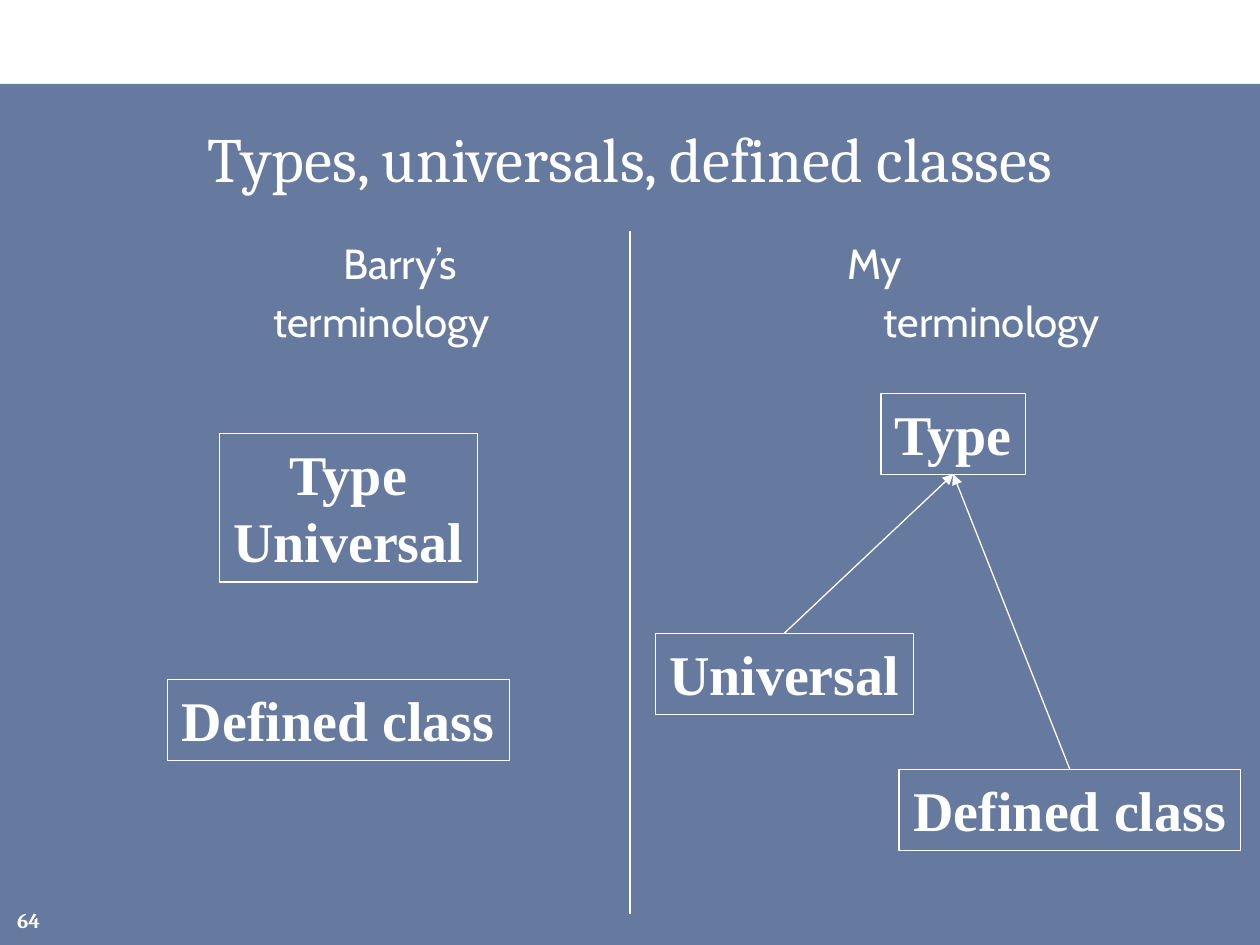
from dataclasses import dataclass

from lxml import etree
from pptx import Presentation
from pptx.dml.color import RGBColor
from pptx.enum.shapes import MSO_CONNECTOR, MSO_SHAPE
from pptx.enum.text import MSO_ANCHOR, MSO_AUTO_SIZE, PP_ALIGN
from pptx.oxml.ns import qn
from pptx.util import Pt

RECTANGLE = MSO_SHAPE.RECTANGLE
STRAIGHT = MSO_CONNECTOR.STRAIGHT
MIDDLE, TOP = MSO_ANCHOR.MIDDLE, MSO_ANCHOR.TOP
LEFT, CENTER, RIGHT = PP_ALIGN.LEFT, PP_ALIGN.CENTER, PP_ALIGN.RIGHT
GROW = MSO_AUTO_SIZE.SHAPE_TO_FIT_TEXT

WHITE = "FFFFFF"
NAVY = "002060"
TOP_SITE, BOTTOM_SITE = 0, 2
LINE_WIDTH = 0.75

TITLE_FORMAT = {"name": "Cambria", "size": Pt(36), "bold": False}
HEADING_FORMAT = {"name": "Cabin", "size": Pt(24), "bold": False}
NUMBER_FORMAT = {"name": "Cambria", "size": Pt(12), "bold": True}
TERM_FORMAT = {"name": "Times New Roman", "size": Pt(32), "bold": True}


@dataclass(frozen=True)
class Term:
    key: str
    lines: tuple[str, ...]
    left: float
    top: float
    width: float
    height: float = 46.3


@dataclass(frozen=True)
class HeadingLine:
    words: tuple[str, str]
    stops: tuple[float, float]


TERMS = (
    Term("merged", ("Type", "Universal"), 125.3, 247.6, 147.5, 85),
    Term("separate", ("Defined class",), 95.6, 388.3, 195.5),
    Term("type", ("Type",), 503.5, 224.7, 82.4),
    Term("universal", ("Universal",), 374.4, 361.9, 147.5),
    Term("defined", ("Defined class",), 513.8, 439.8, 195.3),
)
SUBTYPES = ("universal", "defined")
HEADINGS = (
    HeadingLine(("Barry’s", "My"), (171, 459)),
    HeadingLine(("terminology", "terminology"), (131, 480)),
)


def color(value: str) -> RGBColor:
    return RGBColor.from_string(value)


def format_font(font, values: dict) -> None:
    for name, value in values.items():
        setattr(font, name, value)
    font.color.rgb = color(WHITE)


def write_lines(frame, lines, values: dict, alignment, anchor) -> None:
    frame.vertical_anchor = anchor
    for index, line in enumerate(lines):
        para = frame.paragraphs[0] if index == 0 else frame.add_paragraph()
        para.alignment = alignment
        span = para.add_run()
        span.text = line
        format_font(span.font, values)


def add_band(page, width: float, top: float, height: float) -> None:
    band = page.shapes.add_shape(RECTANGLE, Pt(0), Pt(top), Pt(width), Pt(height))
    band.shadow.inherit = False
    band.fill.solid()
    band.fill.fore_color.rgb = color(NAVY)
    band.line.fill.background()
    tint = band._element.spPr.find(qn("a:solidFill"))[0]
    etree.SubElement(tint, qn("a:alpha"), val="60000")
    page.shapes._spTree.insert(2, band._element)


def add_title(page, text: str) -> None:
    title = page.shapes.title
    title.left, title.top, title.width, title.height = Pt(18), Pt(60), Pt(684), Pt(60)
    write_lines(title.text_frame, [text], TITLE_FORMAT, CENTER, MIDDLE)


def add_headings(page) -> None:
    box = page.shapes.add_textbox(Pt(18), Pt(132), Pt(684), Pt(72))
    frame = box.text_frame
    frame.word_wrap = True
    lines = ["".join(f"\t{word}" for word in heading.words) for heading in HEADINGS]
    write_lines(frame, lines, HEADING_FORMAT, LEFT, TOP)
    for para, heading in zip(frame.paragraphs, HEADINGS):
        properties = para._p.get_or_add_pPr()
        tabs = etree.SubElement(properties, qn("a:tabLst"))
        for stop in heading.stops:
            etree.SubElement(tabs, qn("a:tab"), pos=str(Pt(stop)), algn="l")
    frame.paragraphs[1].space_before = Pt(4.8)


def add_number(page, text: str) -> None:
    box = page.shapes.add_textbox(Pt(0), Pt(511), Pt(30), Pt(29))
    box.text_frame.word_wrap = True
    write_lines(box.text_frame, [text], NUMBER_FORMAT, RIGHT, MIDDLE)


def add_term(page, term: Term):
    box = page.shapes.add_shape(
        RECTANGLE, Pt(term.left), Pt(term.top), Pt(term.width), Pt(term.height)
    )
    box.shadow.inherit = False
    box.fill.background()
    box.line.color.rgb = color(WHITE)
    box.line.width = Pt(LINE_WIDTH)
    frame = box.text_frame
    frame.word_wrap = False
    frame.auto_size = GROW
    write_lines(frame, term.lines, TERM_FORMAT, CENTER, TOP)
    return box


def add_line(page, start: tuple[float, float], end: tuple[float, float]):
    line = page.shapes.add_connector(STRAIGHT, *map(Pt, start + end))
    line.line.color.rgb = color(WHITE)
    line.line.width = Pt(LINE_WIDTH)
    etree.SubElement(line._element.spPr, qn("a:effectLst"))
    return line


def add_arrow(page, child, parent) -> None:
    arrow = add_line(page, (0, 0), (0, 0))
    arrow.begin_connect(child, TOP_SITE)
    arrow.end_connect(parent, BOTTOM_SITE)
    etree.SubElement(arrow.line._get_or_add_ln(), qn("a:tailEnd"), type="triangle")


def main() -> None:
    deck = Presentation()
    deck.slide_width, deck.slide_height = Pt(720), Pt(540)
    page = deck.slides.add_slide(deck.slide_layouts[5])
    add_band(page, 720, 48, 492)
    add_title(page, "Types, universals, defined classes")
    add_headings(page)
    add_number(page, "64")
    add_line(page, (360, 132), (360, 522))
    boxes = {term.key: add_term(page, term) for term in TERMS}
    for key in SUBTYPES:
        add_arrow(page, boxes[key], boxes["type"])
    deck.save("out.pptx")


if __name__ == "__main__":
    main()
